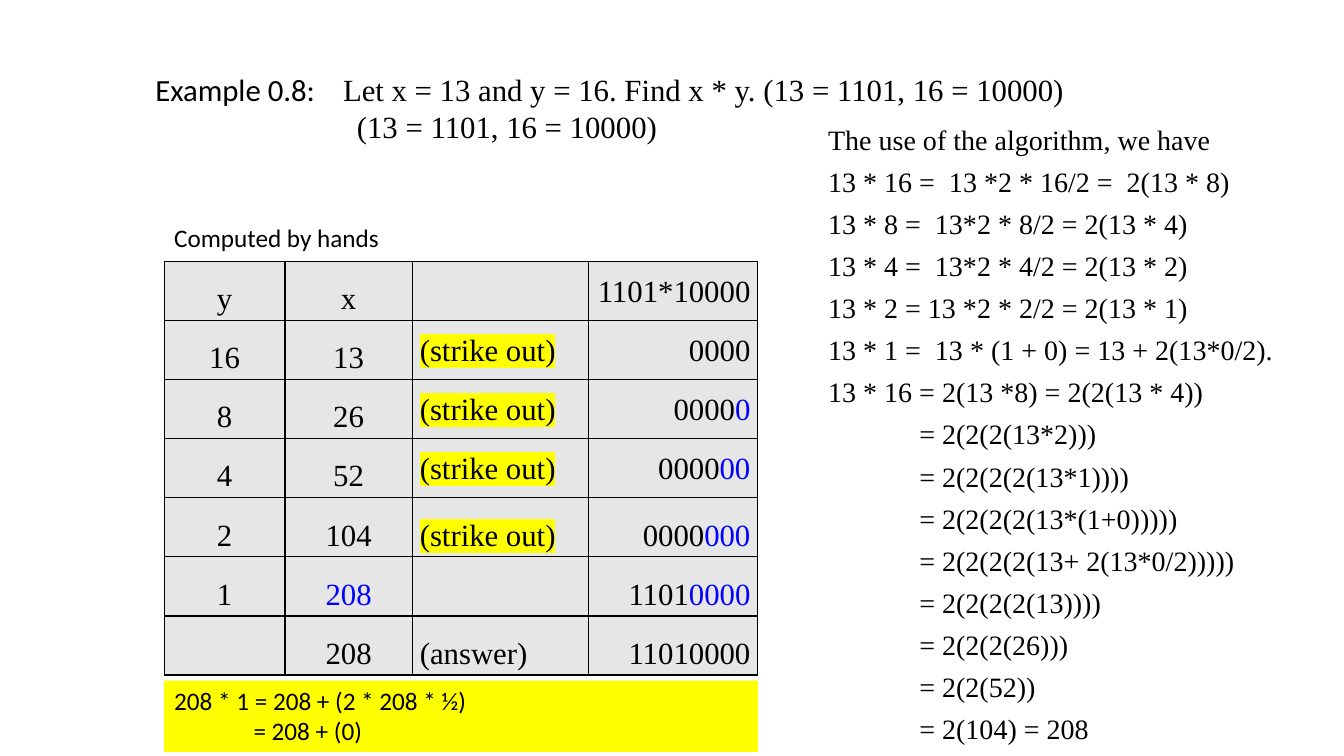
from dataclasses import dataclass

from lxml.etree import SubElement
from pptx import Presentation
from pptx.dml.color import RGBColor
from pptx.enum.shapes import MSO_SHAPE as Shape
from pptx.enum.text import MSO_ANCHOR as Anchor, MSO_AUTO_SIZE as AutoSize, PP_ALIGN as Align
from pptx.oxml.ns import qn
from pptx.util import Cm, Pt


@dataclass(frozen=True)
class Theme:
    ink: str = "000000"
    shifted: str = "0000FF"
    mark: str = "FFFF00"
    cell: str = "E7E6E6"
    sans: str = "Calibri"
    serif: str = "Times New Roman"
    large: int = 22
    medium: int = 20
    small: int = 18


class SlideBuilder:
    def __init__(self, prs, theme):
        self.theme = theme
        self.slide = prs.slides.add_slide(prs.slide_layouts[5])

    def run(self, p, text, font, size, color=None, mark=None):
        r = p.add_run()
        r.text = text
        r.font.name, r.font.size = font, Pt(size)
        r.font.color.rgb = RGBColor.from_string(color or self.theme.ink)
        if mark:
            rPr = r.font._element
            hl = SubElement(rPr, qn("a:highlight"))
            SubElement(hl, qn("a:srgbClr"), val=mark)
            rPr.find(qn("a:solidFill")).addnext(hl)

    def indent(self, p, width):
        pPr = p._p.get_or_add_pPr()
        pPr.set("marL", str(Cm(width)))
        pPr.set("indent", "0")

    def frame(self, sp):
        tf = sp.text_frame
        tf.word_wrap, tf.auto_size = True, AutoSize.NONE
        tf.vertical_anchor = Anchor.TOP
        return tf

    def title(self, box, label, task, tab, note, note_indent):
        t = self.theme
        sp = self.slide.shapes.title
        sp.left, sp.top, sp.width, sp.height = map(Cm, box)
        tf = self.frame(sp)
        p = tf.paragraphs[0]
        p.alignment = Align.LEFT
        tabs = SubElement(p._p.get_or_add_pPr(), qn("a:tabLst"))
        SubElement(tabs, qn("a:tab"), pos=str(Cm(tab)), algn="l")
        self.run(p, label + "\t", t.sans, t.large)
        self.run(p, task, t.serif, t.large)
        p = tf.add_paragraph()
        p.alignment = Align.LEFT
        self.indent(p, note_indent)
        self.run(p, note, t.serif, t.large)

    def text(self, box, lines, font, size, indent=0, after=0, leading=None, fill=None):
        """Lines that open with an equals sign are indented."""
        shapes = self.slide.shapes
        if fill:
            sp = shapes.add_shape(Shape.RECTANGLE, *map(Cm, box))
            sp.shadow.inherit = False
            sp.fill.solid()
            sp.fill.fore_color.rgb = RGBColor.from_string(fill)
            sp.line.fill.background()
        else:
            sp = shapes.add_textbox(*map(Cm, box))
        tf = self.frame(sp)
        for i, line in enumerate(lines):
            p = tf.add_paragraph() if i else tf.paragraphs[0]
            p.alignment, p.space_after = Align.LEFT, Pt(after)
            if leading:
                p.line_spacing = leading
            if line.startswith("="):
                self.indent(p, indent)
            self.run(p, line, font, size)

    def border(self, cell):
        tcPr = cell._tc.get_or_add_tcPr()
        for i, side in enumerate(("lnL", "lnR", "lnT", "lnB")):
            ln = SubElement(tcPr, qn(f"a:{side}"), w=str(Pt(1)))
            fill = SubElement(ln, qn("a:solidFill"))
            SubElement(fill, qn("a:srgbClr"), val=self.theme.ink)
            tcPr.insert(i, ln)

    def table(self, left, top, widths, row_height, rows, aligns, leading):
        """A bar in a cell's text starts its blue part; leading(row, col) gives line spacing."""
        t = self.theme
        table = self.slide.shapes.add_table(
            len(rows), len(widths), Cm(left), Cm(top),
            Cm(sum(widths)), Cm(row_height * len(rows))).table
        for col, width in zip(table.columns, widths):
            col.width = Cm(width)
        for i, row in enumerate(rows):
            table.rows[i].height = Cm(row_height)
            for j, text in enumerate(row):
                cell = table.cell(i, j)
                cell.fill.solid()
                cell.fill.fore_color.rgb = RGBColor.from_string(t.cell)
                self.border(cell)
                cell.vertical_anchor = Anchor.MIDDLE
                cell.margin_left = cell.margin_right = Cm(0.19)
                cell.margin_top = cell.margin_bottom = 0
                p = cell.text_frame.paragraphs[0]
                p.alignment, p.line_spacing = aligns[j], leading(i, j)
                mark = t.mark if text == STRIKE else None
                black, _, blue = text.partition("|")
                for part, color in ((black, t.ink), (blue, t.shifted)):
                    if part:
                        self.run(p, part, t.serif, t.large, color, mark)


STRIKE = "(strike out)"
PRODUCT_ROWS = [
    ("y", "x", "", "1101*10000"),
    ("16", "13", STRIKE, "0000"),
    ("8", "26", STRIKE, "0000|0"),
    ("4", "52", STRIKE, "0000|00"),
    ("2", "104", STRIKE, "0000|000"),
    ("1", "|208", "", "1101|0000"),
    ("", "208", "(answer)", "11010000"),
]
DERIVATION = [
    "The use of the algorithm, we have",
    "13 * 16 =  13 *2 * 16/2 =  2(13 * 8)",
    "13 * 8 =  13*2 * 8/2 = 2(13 * 4)",
    "13 * 4 =  13*2 * 4/2 = 2(13 * 2)",
    "13 * 2 = 13 *2 * 2/2 = 2(13 * 1)",
    "13 * 1 =  13 * (1 + 0) = 13 + 2(13*0/2).",
    "13 * 16 = 2(13 *8) = 2(2(13 * 4))",
    "= 2(2(2(13*2)))",
    "= 2(2(2(2(13*1))))",
    "= 2(2(2(2(13*(1+0)))))",
    "= 2(2(2(2(13+ 2(13*0/2)))))",
    "= 2(2(2(2(13))))",
    "= 2(2(2(26)))",
    "= 2(2(52))",
    "= 2(104) = 208",
]


def main():
    prs = Presentation()
    prs.slide_width, prs.slide_height = Cm(33.87), Cm(19.05)
    t = Theme()
    s = SlideBuilder(prs, t)

    # Task
    s.title((3.66, 1.65, 25.8, 3.07), "Example 0.8:",
            "Let x = 13 and y = 16. Find x * y. (13 = 1101, 16 = 10000)", 4.73,
            "(13 = 1101, 16 = 10000)", 5.08)

    # Hand computation
    s.text((4.14, 5.49, 6.25, 1.02), ["Computed by hands"], t.sans, t.small)
    s.table(4.14, 6.58, (3.04, 3.21, 4.44, 4.27), 1.49, PRODUCT_ROWS,
            (Align.CENTER, Align.CENTER, Align.LEFT, Align.RIGHT),
            lambda row, col: 1.07 if col > 1 and row < 4 else 1.5)
    s.text((4.14, 17.15, 14.96, 1.8), ["208 * 1 = 208 + (2 * 208 * ½)", "= 208 + (0)"],
           t.sans, t.small, indent=2, fill=t.mark)

    # Derivation by the algorithm
    s.text((20.62, 2.97, 12.07, 16.08), DERIVATION, t.serif, t.medium,
           indent=2.3, after=6, leading=Pt(24))

    prs.save("out.pptx")


if __name__ == "__main__":
    main()
